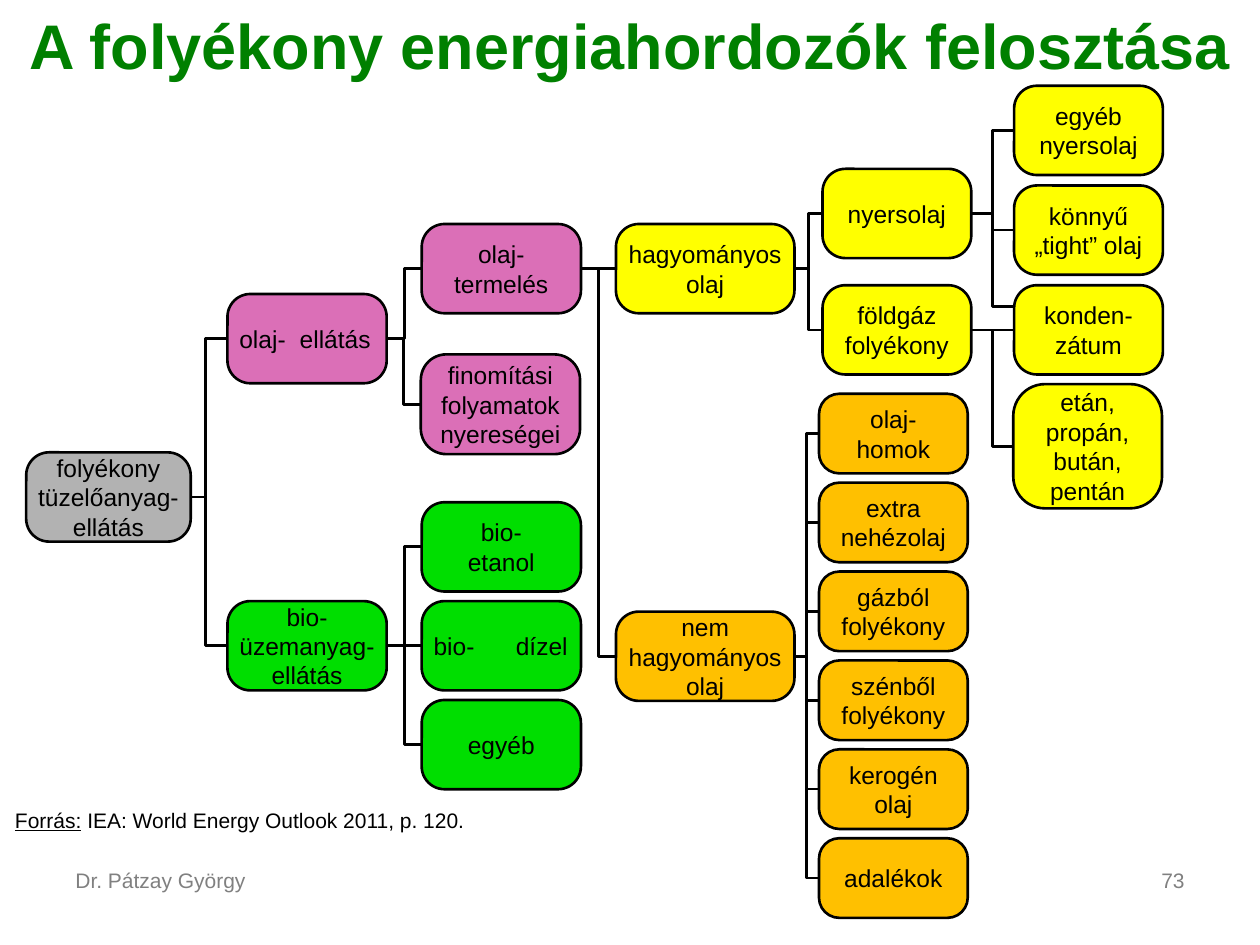
from pptx import Presentation
from pptx import util as u
from pptx.dml.color import RGBColor
from pptx.enum import shapes, text
from pptx.oxml.ns import qn
from lxml import etree

FONT = "Arial"
BLACK, GREY, DARK_GREEN = "000000", "808080", "008000"
SILVER, PINK, GREEN = "B2B2B2", "DB6FB7", "00DE00"
YELLOW, ORANGE = "FFFF00", "FFC000"
LEFT, RIGHT = 1, 3  # connection sites of a rounded rectangle


def color(value):
    return RGBColor.from_string(value)


def apply(target, values):
    for name, value in values.items():
        setattr(target, name, value)


class Slide:
    """Style and current page, with one method for each kind of element."""

    def __init__(self, page):
        self.page = page
        self.line_width = u.Pt(1.5)
        self.corner = 0.256

    def format_font(self, font, size, fill, **values):
        apply(font, {"name": FONT, "size": u.Pt(size), **values})
        font.color.rgb = color(fill)

    def title(self, words, left, top, width, height):
        box = self.page.shapes.title
        apply(box, dict(left=u.Pt(left), top=u.Pt(top),
                        width=u.Pt(width), height=u.Pt(height)))
        frame = box.text_frame
        frame.text = words
        apply(frame, dict(word_wrap=True, auto_size=text.MSO_AUTO_SIZE.NONE,
                          vertical_anchor=text.MSO_ANCHOR.MIDDLE))
        para = frame.paragraphs[0]
        para.alignment = text.PP_ALIGN.CENTER
        self.format_font(para.runs[0].font, 36, DARK_GREEN, bold=True)

    def label(self, spans, left, top, width, height, fill=BLACK, **values):
        """Text box of one paragraph; spans are (words, underline)."""
        box = self.page.shapes.add_textbox(*map(u.Pt, (left, top, width, height)))
        box.text_frame.word_wrap = True
        para = box.text_frame.paragraphs[0]
        apply(para, values)
        for words, underline in spans:
            span = para.add_run()
            span.text = words
            self.format_font(span.font, 12, fill, underline=underline)

    def node(self, words, left, top, width, height, fill, side=3, tab=None):
        """Rounded box; a tab position splits its words on one line."""
        box = self.page.shapes.add_shape(
            shapes.MSO_SHAPE.ROUNDED_RECTANGLE,
            *map(u.Pt, (left, top, width, height)))
        box.adjustments[0] = self.corner
        box.shadow.inherit = False
        box.fill.solid()
        box.fill.fore_color.rgb = color(fill)
        box.line.color.rgb = color(BLACK)
        box.line.width = self.line_width
        frame = box.text_frame
        apply(frame, dict(word_wrap=True,
                          vertical_anchor=text.MSO_ANCHOR.MIDDLE,
                          margin_left=u.Pt(side), margin_right=u.Pt(side),
                          margin_top=u.Pt(3), margin_bottom=u.Pt(3)))
        frame.text = words
        para = frame.paragraphs[0]
        para.alignment = text.PP_ALIGN.LEFT if tab else text.PP_ALIGN.CENTER
        if tab:
            stops = etree.SubElement(para._p.get_or_add_pPr(), qn("a:tabLst"))
            etree.SubElement(stops, qn("a:tab"), pos=str(u.Pt(tab)), algn="l")
        for span in para.runs:
            self.format_font(span.font, 14, BLACK)
        return box

    def join(self, parent, child, bend=None, shift=0):
        """Connector from parent to child; shift moves its end off centre."""
        start_y = parent.top + parent.height // 2
        end_y = child.top + child.height // 2 + u.Pt(shift)
        kinds = shapes.MSO_CONNECTOR
        kind = kinds.STRAIGHT if start_y == end_y else kinds.ELBOW
        line = self.page.shapes.add_connector(
            kind, parent.left + parent.width, start_y, child.left, end_y)
        line.begin_connect(parent, RIGHT)
        if not shift:
            line.end_connect(child, LEFT)
        line.line.color.rgb = color(BLACK)
        line.line.width = self.line_width
        properties = line._element.spPr
        etree.SubElement(properties, qn("a:effectLst"))
        if bend:
            guides = properties.find(qn("a:prstGeom")).find(qn("a:avLst"))
            etree.SubElement(guides, qn("a:gd"), name="adj1",
                             fmla=f"val {round(bend * 100000)}")


def main():
    deck = Presentation()
    deck.slide_width, deck.slide_height = u.Pt(720), u.Pt(540)
    slide = Slide(deck.slides.add_slide(deck.slide_layouts[5]))
    slide.title("A folyékony energiahordozók felosztása", 0, 0, 720, 51)

    # Fuel supply and its two branches
    root = slide.node("folyékony tüzelőanyag-ellátás", 15, 258.5, 94, 51, SILVER, side=0)
    oil = slide.node("olaj-\tellátás", 130, 168, 91, 51, PINK, tab=34.5)
    biofuel = slide.node("bio-üzemanyag-ellátás", 130, 343.5, 91, 51, GREEN, side=0)

    # Oil supply and biofuels
    production = slide.node("olaj-\vtermelés", 241, 128, 91, 51, PINK)
    refining = slide.node("finomítási folyamatok nyereségei", 240.5, 202.5, 91, 57, PINK)
    biofuels = [
        slide.node(words, 241, 287 + 56.5 * row, 91, 51, GREEN, tab=tab)
        for row, (words, tab) in enumerate(
            [("bio-\vetanol", None), ("bio-\tdízel", 47), ("egyéb", None)])]

    # Conventional oil
    conventional = slide.node("hagyományos olaj", 352, 128, 102, 51, YELLOW, side=0)
    crude = slide.node("nyersolaj", 470, 96.5, 85, 51, YELLOW)
    gas_liquid = slide.node("földgáz folyékony", 470, 163, 85, 51, YELLOW)
    other, tight, condensate = [
        slide.node(words, 579.5, 49 + 57 * row, 85, 51, YELLOW)
        for row, words in enumerate(
            ["egyéb nyersolaj", "könnyű „tight” olaj", "konden-zátum"])]
    light_gases = slide.node("etán, propán, bután, pentán", 579, 219.5, 85, 71, YELLOW)

    # Unconventional oil
    unconventional = slide.node("nem hagyományos olaj", 352, 349.5, 102, 51, ORANGE, side=0)
    sources = [
        slide.node(words, 468, 225 + 50.8 * row, 85, 45.5, ORANGE)
        for row, words in enumerate(
            ["olaj-\vhomok", "extra nehézolaj", "gázból folyékony",
             "szénből folyékony", "kerogén olaj", "adalékok"])]

    # Connectors
    for branch in (oil, biofuel):
        slide.join(root, branch, bend=0.4)
    tree = [(oil, [production, refining]),
            (biofuel, biofuels),
            (production, [conventional, unconventional]),
            (conventional, [crude, gas_liquid]),
            (crude, [other, tight]),
            (gas_liquid, [condensate, light_gases]),
            (unconventional, sources)]
    for parent, children in tree:
        for child in children:
            slide.join(parent, child)
    slide.join(crude, condensate, shift=-13.5)

    # Source and footer
    slide.label([("Forrás:", True), (" IEA: World Energy Outlook 2011, p. 120.", False)],
                1.5, 459.5, 512.5, 20, line_spacing=0.9)
    slide.label([("Dr. Pátzay György", False)], 36, 492, 168, 37.5, GREY)
    slide.label([("73", False)], 516, 492, 168, 37.5, GREY,
                alignment=text.PP_ALIGN.RIGHT)

    deck.save("out.pptx")


if __name__ == "__main__":
    main()
